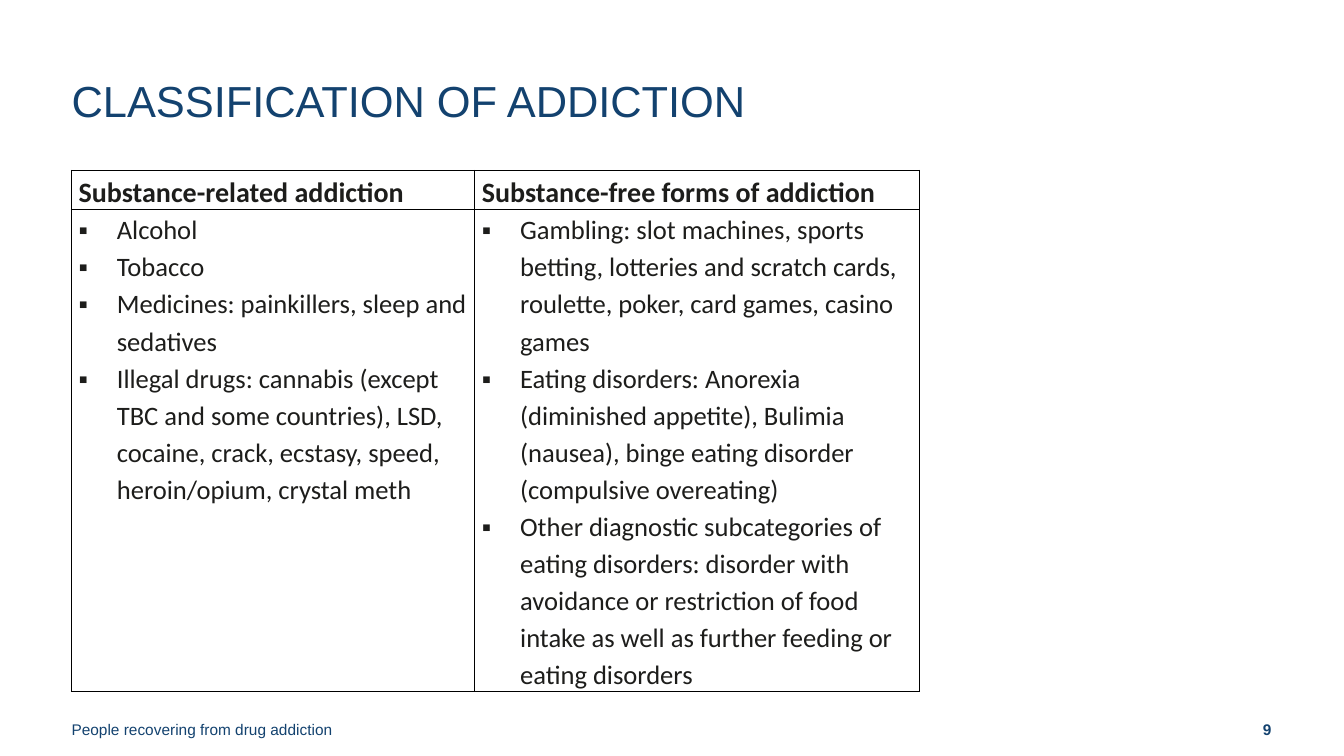
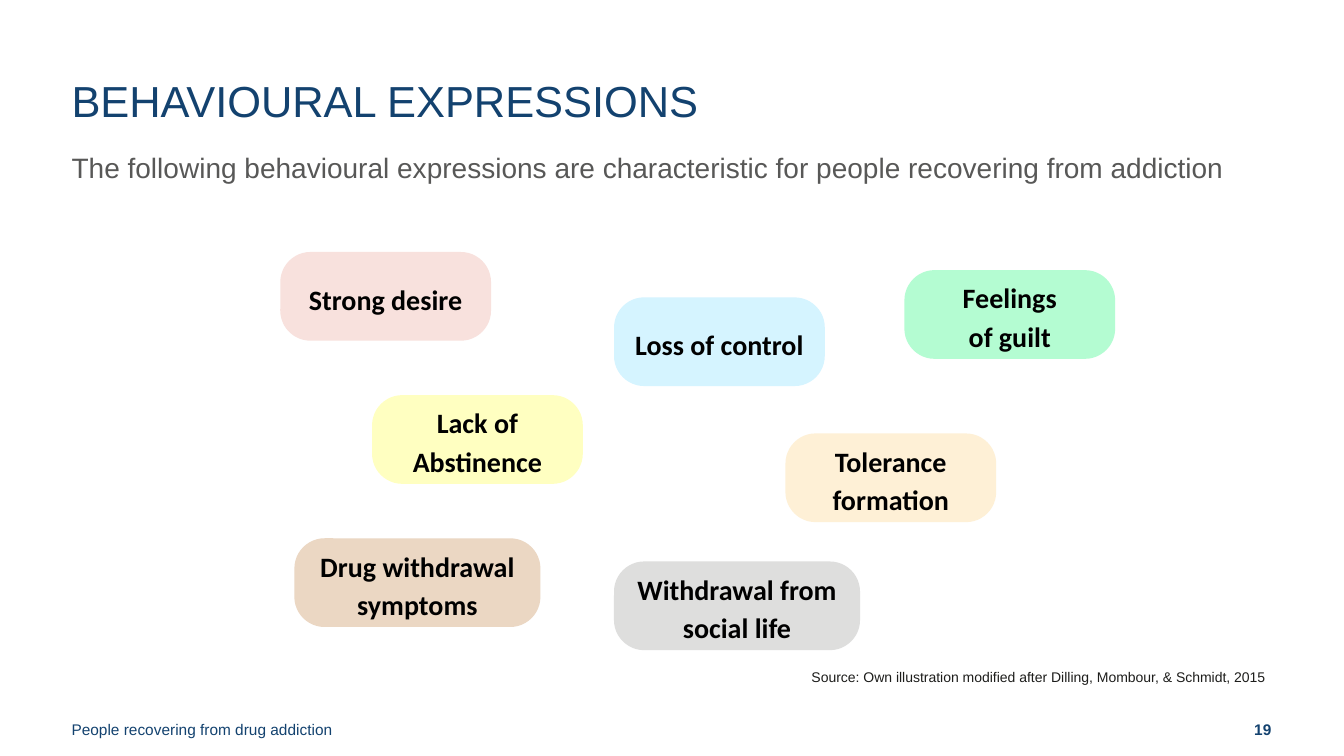
"""Build two slides on forms of addiction and their behavioural expressions."""
from dataclasses import dataclass

from lxml import etree
from pptx import Presentation
from pptx.dml.color import RGBColor
from pptx.enum.shapes import MSO_SHAPE
from pptx.enum.text import MSO_ANCHOR, MSO_AUTO_SIZE, PP_ALIGN
from pptx.oxml.ns import qn
from pptx.presentation import Presentation as Deck
from pptx.slide import Slide
from pptx.table import _Cell as Cell
from pptx.text.text import TextFrame
from pptx.util import Length, Pt

NAVY = RGBColor(0x13, 0x42, 0x6F)
GREY = RGBColor(0x58, 0x58, 0x57)
INK = RGBColor(0x1D, 0x1D, 0x1B)
BLACK = RGBColor(0, 0, 0)
ROSE = RGBColor(0xF8, 0xE1, 0xDD)
SKY = RGBColor(0xD5, 0xF4, 0xFF)
LEMON = RGBColor(0xFF, 0xFF, 0xC1)
CREAM = RGBColor(0xFE, 0xF0, 0xD6)
SAND = RGBColor(0xEB, 0xD7, 0xC3)
SILVER = RGBColor(0xDE, 0xDE, 0xDD)
MINT = RGBColor(0xB4, 0xFC, 0xD2)

LEFT, RIGHT, CENTER = PP_ALIGN.LEFT, PP_ALIGN.RIGHT, PP_ALIGN.CENTER
TOP, MIDDLE, BOTTOM = MSO_ANCHOR.TOP, MSO_ANCHOR.MIDDLE, MSO_ANCHOR.BOTTOM
NO_AUTOFIT = MSO_AUTO_SIZE.NONE
ROUNDED = MSO_SHAPE.ROUNDED_RECTANGLE

EMU_PER_PX = 9144
SLIDE_WIDTH, SLIDE_HEIGHT = 1333, 750
MARGIN = 71
FOOTER_TOP, FOOTER_HEIGHT = 689, 60
BULLET_INDENT = 38
CARD_HEIGHT = 88
NARROW, WIDE = 209, 244
FOOTER = "People recovering from drug addiction"


@dataclass(frozen=True)
class Style:
    """Look of the paragraphs in one text frame."""

    size: int
    color: RGBColor
    font: str = "Arial"
    bold: bool = False
    align: PP_ALIGN = LEFT
    spacing: float | Length = 1.0


@dataclass(frozen=True)
class Box:
    """Place of an object in px."""

    left: int
    top: int
    width: int
    height: int

    def emu(self) -> tuple[Length, ...]:
        """Return left, top, width and height as EMU."""
        return tuple(px(n) for n in (self.left, self.top, self.width, self.height))


@dataclass(frozen=True)
class Card:
    """Rounded card with one behavioural expression."""

    text: str
    left: int
    top: int
    fill: RGBColor
    width: int = NARROW


@dataclass(frozen=True)
class Column:
    """Table column with a heading and bullet points."""

    heading: str
    width: int
    points: tuple[str, ...]


TITLE_STYLE = Style(31, NAVY, spacing=Pt(34))
LEAD_STYLE = Style(20, GREY, spacing=Pt(24))
FOOTER_STYLE = Style(11, NAVY, spacing=Pt(13.3))
NUMBER_STYLE = Style(11, NAVY, bold=True, align=RIGHT, spacing=Pt(13.3))
HEADING_STYLE = Style(20, INK, "Calibri", bold=True, spacing=1.15)
POINT_STYLE = Style(19, INK, "Calibri", spacing=1.15)
CARD_STYLE = Style(20, BLACK, "Calibri", bold=True, align=CENTER, spacing=1.15)
SOURCE_STYLE = Style(10, INK)

COLUMNS = (
    Column("Substance-related addiction", 400, (
        "Alcohol",
        "Tobacco",
        "Medicines: painkillers, sleep and sedatives",
        "Illegal drugs: cannabis (except TBC and some countries), LSD, "
        "cocaine, crack, ecstasy, speed, heroin/opium, crystal meth",
    )),
    Column("Substance-free forms of addiction", 441, (
        "Gambling: slot machines, sports betting, lotteries and scratch cards, "
        "roulette, poker, card games, casino games",
        "Eating disorders: Anorexia (diminished appetite), Bulimia (nausea), "
        "binge eating disorder (compulsive overeating)",
        "Other diagnostic subcategories of eating disorders: disorder with "
        "avoidance or restriction of food intake as well as further feeding "
        "or eating disorders",
    )),
)
ROW_HEIGHTS = (38, 465)

CARDS = (
    Card("Strong desire", 278, 250, ROSE),
    Card("Loss of control", 609, 295, SKY),
    Card("Lack of Abstinence", 369, 392, LEMON),
    Card("Tolerance formation", 779, 430, CREAM),
    Card("Drug withdrawal symptoms", 292, 534, SAND, WIDE),
    Card("Withdrawal from social life", 609, 557, SILVER, WIDE),
    Card("Feelings\vof guilt", 897, 268, MINT),
)


def px(value: int) -> Length:
    """Convert px to EMU."""
    return Length(value * EMU_PER_PX)


def add_bullets(frame: TextFrame) -> None:
    """Give each paragraph a square bullet with a hanging indent."""
    for paragraph in frame.paragraphs:
        properties = paragraph._p.get_or_add_pPr()
        properties.set("marL", str(px(BULLET_INDENT)))
        properties.set("indent", str(-px(BULLET_INDENT)))
        etree.SubElement(properties, qn("a:buFont"), typeface="Arial")
        etree.SubElement(properties, qn("a:buChar"), char="▪")


def format_text(frame: TextFrame, style: Style) -> None:
    """Apply a style to all paragraphs and runs."""
    for paragraph in frame.paragraphs:
        paragraph.alignment = style.align
        paragraph.line_spacing = style.spacing
        for run in paragraph.runs:
            run.font.name = style.font
            run.font.size = Pt(style.size)
            run.font.bold = style.bold
            run.font.color.rgb = style.color


def fill_frame(frame: TextFrame, text: str, style: Style, anchor: MSO_ANCHOR = TOP,
               insets: tuple[int, int, int, int] = (10, 5, 10, 5)) -> None:
    """Write styled text with insets for left, top, right and bottom."""
    frame.text = text
    frame.word_wrap = True
    frame.auto_size = NO_AUTOFIT
    frame.vertical_anchor = anchor
    (frame.margin_left, frame.margin_top,
     frame.margin_right, frame.margin_bottom) = map(px, insets)
    format_text(frame, style)


def add_text(slide: Slide, box: Box, text: str, style: Style, anchor: MSO_ANCHOR = TOP,
             insets: tuple[int, int, int, int] = (10, 5, 10, 5)) -> None:
    """Add a text box."""
    fill_frame(slide.shapes.add_textbox(*box.emu()).text_frame, text, style, anchor, insets)


def add_slide(presentation: Deck, title: str, number: int) -> Slide:
    """Add a slide with title, footer and page number."""
    slide = presentation.slides.add_slide(presentation.slide_layouts.get_by_name("Title Only"))
    heading = slide.shapes.title
    heading.left, heading.top, heading.width, heading.height = Box(MARGIN, 73, 1080, 112).emu()
    fill_frame(heading.text_frame, title, TITLE_STYLE, insets=(0, 5, 10, 5))
    add_text(slide, Box(0, FOOTER_TOP, 450, FOOTER_HEIGHT), FOOTER,
             FOOTER_STYLE, BOTTOM, (MARGIN, 5, 0, 16))
    add_text(slide, Box(1032, FOOTER_TOP, 300, FOOTER_HEIGHT), str(number),
             NUMBER_STYLE, BOTTOM, (0, 5, MARGIN, 16))
    return slide


def format_cell(cell: Cell, style: Style) -> None:
    """Set the insets, text style, clear fill and black borders of a cell."""
    cell.margin_left = cell.margin_right = px(7)
    cell.margin_top = cell.margin_bottom = px(0)
    format_text(cell.text_frame, style)
    cell.fill.background()
    properties = cell._tc.get_or_add_tcPr()
    for index, side in enumerate(("lnL", "lnR", "lnT", "lnB")):
        border = etree.Element(qn(f"a:{side}"), w=str(Pt(1)))
        color = etree.SubElement(etree.SubElement(border, qn("a:solidFill")), qn("a:srgbClr"))
        color.set("val", str(BLACK))
        properties.insert(index, border)


def add_classification(slide: Slide) -> None:
    """Add the table of addiction forms."""
    box = Box(MARGIN, 169, sum(column.width for column in COLUMNS), sum(ROW_HEIGHTS))
    table = slide.shapes.add_table(len(ROW_HEIGHTS), len(COLUMNS), *box.emu()).table
    table.first_row = table.horz_banding = False
    for row, height in zip(table.rows, ROW_HEIGHTS):
        row.height = px(height)
    for index, column in enumerate(COLUMNS):
        table.columns[index].width = px(column.width)
        heading, points = table.cell(0, index), table.cell(1, index)
        heading.text_frame.text = column.heading
        points.text_frame.text = "\n".join(column.points)
        add_bullets(points.text_frame)
        format_cell(heading, HEADING_STYLE)
        format_cell(points, POINT_STYLE)


def add_card(slide: Slide, card: Card) -> None:
    """Add one rounded card."""
    box = Box(card.left, card.top, card.width, CARD_HEIGHT)
    shape = slide.shapes.add_shape(ROUNDED, *box.emu())
    shape.adjustments[0] = 0.34
    shape.shadow.inherit = False
    shape.fill.solid()
    shape.fill.fore_color.rgb = card.fill
    shape.line.fill.background()
    fill_frame(shape.text_frame, card.text, CARD_STYLE, MIDDLE)


def main() -> None:
    """Build and save the presentation."""
    presentation = Presentation()
    presentation.slide_width, presentation.slide_height = px(SLIDE_WIDTH), px(SLIDE_HEIGHT)

    add_classification(add_slide(presentation, "CLASSIFICATION OF ADDICTION", 9))

    expressions = add_slide(presentation, "BEHAVIOURAL EXPRESSIONS", 19)
    add_text(expressions, Box(MARGIN, 145, 1222, 50),
             "The following behavioural expressions are characteristic "
             "for people recovering from addiction", LEAD_STYLE, insets=(0, 4, 10, 5))
    for card in CARDS:
        add_card(expressions, card)
    add_text(expressions, Box(795, 658, 478, 27),
             "Source: Own illustration modified after Dilling, Mombour, & Schmidt, 2015",
             SOURCE_STYLE)

    presentation.save("out.pptx")


if __name__ == "__main__":
    main()
